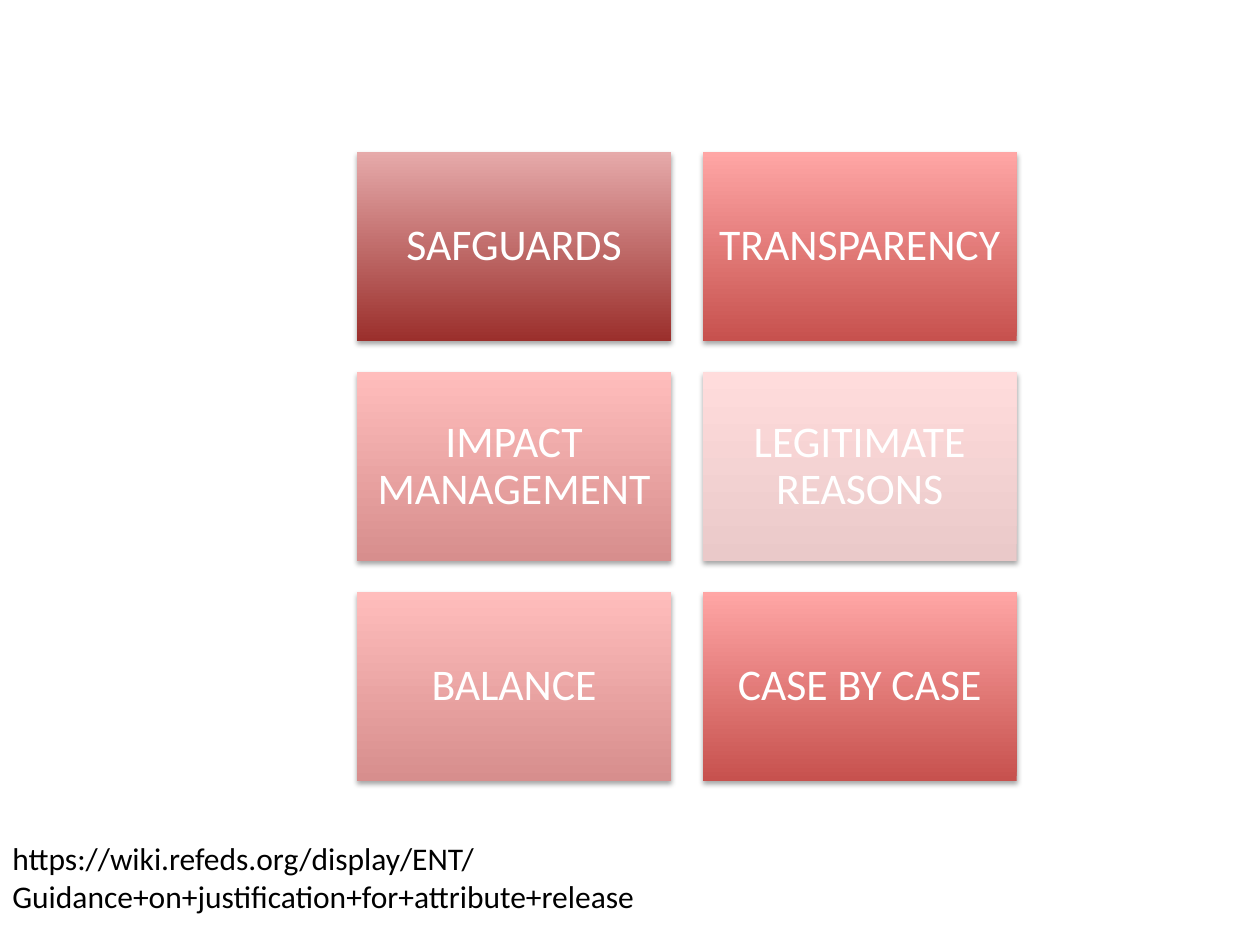
from lxml import etree
from pptx import Presentation
from pptx import util as u
from pptx.dml.color import RGBColor
from pptx.enum import shapes, text
from pptx.oxml.ns import qn

WHITE = RGBColor(0xFF, 0xFF, 0xFF)
BLACK = RGBColor(0, 0, 0)
DEEP = (RGBColor(0x9B, 0x2F, 0x2C), RGBColor(0xE6, 0xAA, 0xAA))
STRONG = (RGBColor(0xC7, 0x51, 0x4E), RGBColor(0xFF, 0xA6, 0xA5))
SOFT = (RGBColor(0xD7, 0x8E, 0x8D), RGBColor(0xFF, 0xBD, 0xBC))
PALE = (RGBColor(0xEA, 0xC9, 0xC9), RGBColor(0xFF, 0xDC, 0xDC))

LEFT, TOP = 204, 87
WIDTH, HEIGHT = 179.5, 107.75
COLUMN_STEP, ROW_STEP = 197.5, 125.7


def write(frame, words, *, size, color, align, anchor, spacing=1.0, inset=None):
    frame.word_wrap = True
    frame.vertical_anchor = anchor
    if inset is not None:
        frame.margin_left = frame.margin_right = u.Pt(inset)
        frame.margin_top = frame.margin_bottom = u.Pt(inset)
    paragraph = frame.paragraphs[0]
    paragraph.alignment = align
    paragraph.line_spacing = spacing
    run = paragraph.add_run()
    run.text = words
    run.font.name = "Calibri"
    run.font.size = u.Pt(size)
    run.font.color.rgb = color


def cast_shadow(shape):
    shape.shadow.inherit = False
    effects = shape.element.spPr.find(qn("a:effectLst"))
    outer = etree.SubElement(
        effects, qn("a:outerShdw"), blurRad=str(u.Pt(3.1)), dist=str(u.Pt(1.8)),
        dir="5400000", rotWithShape="0")
    shade = etree.SubElement(outer, qn("a:srgbClr"), val="000000")
    etree.SubElement(shade, qn("a:alpha"), val="35000")


deck = Presentation()
deck.slide_width, deck.slide_height = u.Pt(720), u.Pt(540)
slide = deck.slides.add_slide(deck.slide_layouts[6])

principles = [
    ("SAFGUARDS", DEEP),
    ("TRANSPARENCY", STRONG),
    ("IMPACT MANAGEMENT", SOFT),
    ("LEGITIMATE REASONS", PALE),
    ("BALANCE", SOFT),
    ("CASE BY CASE", STRONG),
]
principle_grid = slide.shapes.add_group_shape()
for index, (principle, shades) in enumerate(principles):
    row, column = divmod(index, 2)
    tile = principle_grid.shapes.add_shape(
        shapes.MSO_SHAPE.RECTANGLE,
        u.Pt(LEFT + column * COLUMN_STEP), u.Pt(TOP + row * ROW_STEP),
        u.Pt(WIDTH), u.Pt(HEIGHT))
    tile.fill.gradient()
    tile.fill.gradient_angle = 90
    for stop, position, shade in zip(tile.fill.gradient_stops, (0, 1), shades):
        stop.position = position
        stop.color.rgb = shade
    tile.line.fill.background()
    cast_shadow(tile)
    write(tile.text_frame, principle, size=25, color=WHITE,
          align=text.PP_ALIGN.CENTER, anchor=text.MSO_ANCHOR.MIDDLE,
          spacing=0.9, inset=7.2)

guidance = slide.shapes.add_textbox(u.Pt(0), u.Pt(476), u.Pt(532), u.Pt(51))
write(guidance.text_frame,
      "https://wiki.refeds.org/display/ENT/Guidance+on+justification+for+attribute+release",
      size=18, color=BLACK, align=text.PP_ALIGN.LEFT, anchor=text.MSO_ANCHOR.TOP)
guidance.text_frame.auto_size = text.MSO_AUTO_SIZE.SHAPE_TO_FIT_TEXT

deck.save("out.pptx")
